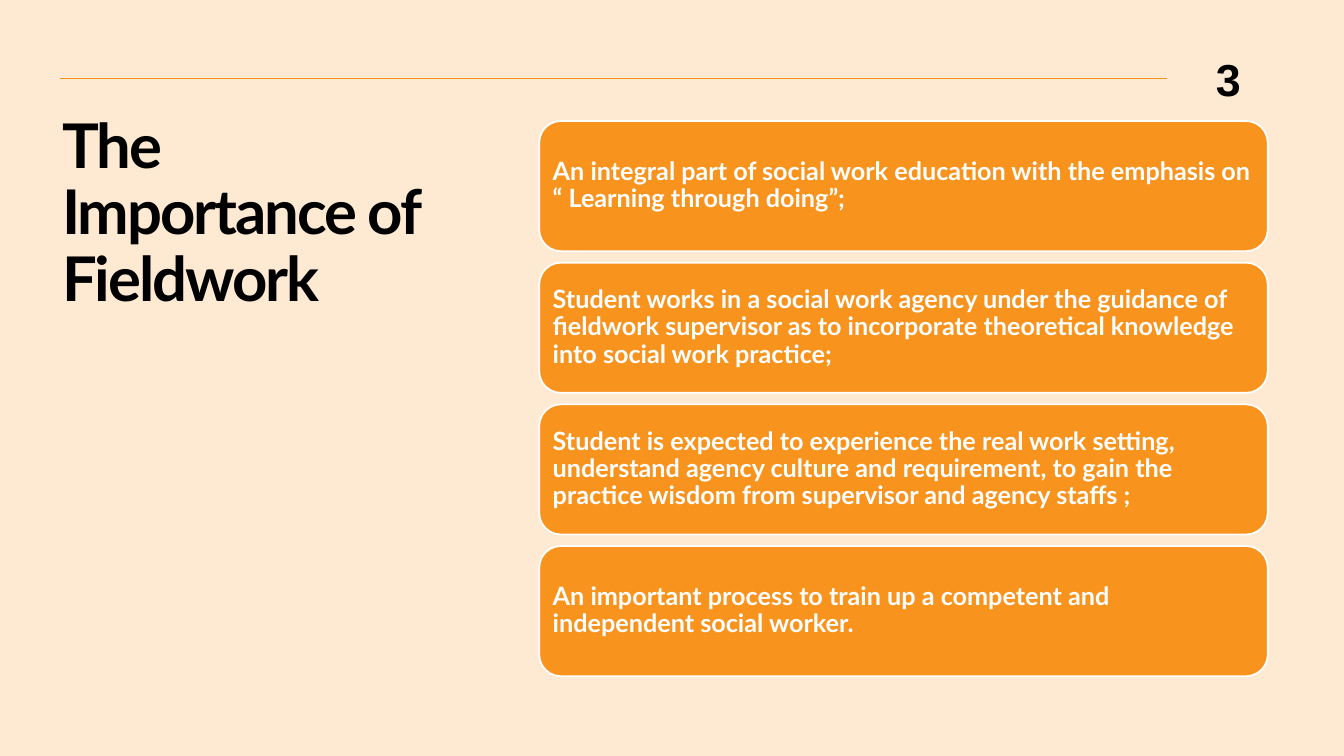
"""Build the slide on the importance of fieldwork."""
from dataclasses import dataclass

from pptx import Presentation
from pptx import util as u
from pptx.dml.color import RGBColor
from pptx.enum import shapes, text
from pptx.oxml.xmlchemy import OxmlElement
from pptx.slide import Slide
from pptx.text.text import TextFrame, _Paragraph

CREAM = RGBColor(0xFE, 0xE9, 0xD2)
ORANGE = RGBColor(0xF8, 0x93, 0x1D)
WHITE = RGBColor(0xFF, 0xFF, 0xFF)
BLACK = RGBColor(0x00, 0x00, 0x00)

CARD_LEFT, CARD_TOP, CARD_WIDTH, CARD_HEIGHT = 13.59, 3.05, 18.36, 3.28
CARD_PITCH = 3.57


@dataclass(frozen=True)
class Label:
    """A plain text box with lengths in centimetres."""
    words: str
    left: float
    top: float
    width: float
    height: float
    insets: tuple[float, float, float, float]
    font: str
    size: int
    align: text.PP_ALIGN
    space_after: float = 0
    tracking: int = 0


LABELS = [
    Label("The Importance of Fieldwork", 1.57, 2.77, 10.41, 14.3,
          (0, 0.13, 0.25, 0.13), "Lato", 44, text.PP_ALIGN.LEFT, tracking=-150),
    Label("3", 28.73, 1.45, 2.54, 1.35,
          (0, 0, 0, 0), "Arial", 32, text.PP_ALIGN.RIGHT, space_after=6),
]

REASONS = [
    "An integral part of social work education with the emphasis on "
    "“ Learning through doing”;",
    "Student works in a social work agency under the guidance of fieldwork "
    "supervisor as to incorporate theoretical knowledge into social work practice;",
    "Student is expected to experience the real work setting, understand agency "
    "culture and requirement, to gain the practice wisdom from supervisor and "
    "agency staffs ;",
    "An important process to train up a competent and independent social worker.",
]


def write(tf: TextFrame, words: str, insets: tuple[float, float, float, float],
          font: str, size: int, color: RGBColor, align: text.PP_ALIGN,
          space_after: float) -> _Paragraph:
    """Fill a text frame with one bold paragraph and return it."""
    tf.word_wrap = True
    tf.margin_left, tf.margin_top, tf.margin_right, tf.margin_bottom = map(u.Cm, insets)
    p = tf.paragraphs[0]
    p.add_run().text = words
    p.alignment = align
    p.line_spacing = 0.9
    p.space_after = u.Pt(space_after)
    p.font.name = font
    p.font.size = u.Pt(size)
    p.font.bold = True
    p.font.color.rgb = color
    return p


def add_label(s: Slide, label: Label) -> None:
    """Add a text box in black type."""
    sp = s.shapes.add_textbox(u.Cm(label.left), u.Cm(label.top),
                              u.Cm(label.width), u.Cm(label.height))
    tf = sp.text_frame
    tf.vertical_anchor = text.MSO_ANCHOR.TOP
    p = write(tf, label.words, label.insets, label.font, label.size, BLACK,
              label.align, label.space_after)
    if label.tracking:
        for r in p.runs:
            r.font._element.set("spc", str(label.tracking))


def add_card(s: Slide, row: int, words: str) -> None:
    """Add one rounded card in the column of reasons."""
    sp = s.shapes.add_shape(shapes.MSO_SHAPE.ROUNDED_RECTANGLE, u.Cm(CARD_LEFT),
                            u.Cm(CARD_TOP + row * CARD_PITCH),
                            u.Cm(CARD_WIDTH), u.Cm(CARD_HEIGHT))
    sp.shadow.inherit = False
    sp.fill.solid()
    sp.fill.fore_color.rgb = ORANGE
    sp.line.color.rgb = WHITE
    sp.line.width = u.Pt(1.25)
    tf = sp.text_frame
    tf.vertical_anchor = text.MSO_ANCHOR.MIDDLE
    write(tf, words, (0.18,) * 4, "Lato", 18, WHITE, text.PP_ALIGN.LEFT, 6.3)


def add_rule(s: Slide) -> None:
    """Add the thin line across the top."""
    rule = s.shapes.add_connector(shapes.MSO_CONNECTOR.STRAIGHT,
                                  u.Cm(1.52), u.Cm(1.98), u.Cm(29.41), u.Cm(1.98))
    rule.line.color.rgb = ORANGE
    rule.line.width = u.Pt(0.75)
    rule._element.spPr.append(OxmlElement("a:effectLst"))


def main() -> None:
    """Draw the slide and save it."""
    prs = Presentation()
    prs.slide_width, prs.slide_height = u.Cm(33.87), u.Cm(19.05)
    s = prs.slides.add_slide(prs.slide_layouts[6])
    s.background.fill.solid()
    s.background.fill.fore_color.rgb = CREAM
    add_rule(s)
    for label in LABELS:
        add_label(s, label)
    for row, words in enumerate(REASONS):
        add_card(s, row, words)
    prs.save("out.pptx")


if __name__ == "__main__":
    main()
